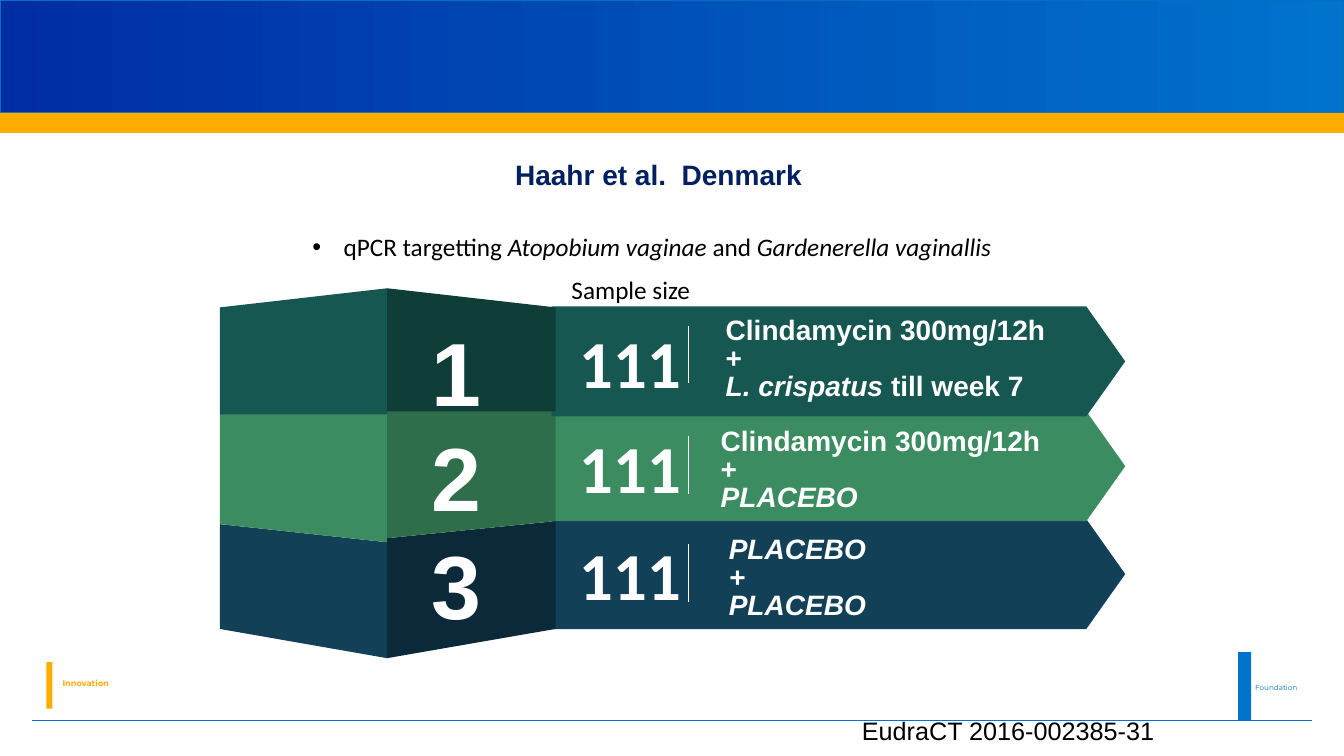
from dataclasses import dataclass
from itertools import pairwise

from lxml import etree
from pptx import Presentation
from pptx.dml.color import RGBColor
from pptx.enum.shapes import MSO_CONNECTOR, MSO_SHAPE
from pptx.enum.text import MSO_ANCHOR, PP_ALIGN
from pptx.oxml.ns import qn
from pptx.util import Inches, Pt

RECTANGLE, PENTAGON = MSO_SHAPE.RECTANGLE, MSO_SHAPE.PENTAGON
STRAIGHT = MSO_CONNECTOR.STRAIGHT
TOP, MIDDLE = MSO_ANCHOR.TOP, MSO_ANCHOR.MIDDLE
LEFT, CENTER = PP_ALIGN.LEFT, PP_ALIGN.CENTER
CELL = Inches(0.1)
COLUMNS, ROWS = 133.3, 75


@dataclass(frozen=True)
class Theme:
    """Colours, fonts and type sizes of the slide."""
    deep_blue: str = "002CA4"
    blue: str = "0073CD"
    outline: str = "0070C0"
    amber: str = "FEAC00"
    title: str = "002060"
    black: str = "000000"
    white: str = "FFFFFF"
    heading_font: str = "Arial"
    body_font: str = "Calibri"
    brand_font: str = "Montserrat"
    number_size: float = 64
    sample_size: float = 48
    heading_size: float = 20
    body_size: float = 18
    innovation_size: float = 5.9
    foundation_size: float = 5.2


@dataclass(frozen=True)
class Box:
    """An area measured in grid cells."""
    left: float
    top: float
    width: float
    height: float

    def inner(self, left, top, width, height):
        """Return an area placed relative to this one."""
        return Box(self.left + left, self.top + top, width, height)

    def lengths(self):
        """Return left, top, width and height as slide lengths."""
        return [round(value * CELL) for value in (self.left, self.top, self.width, self.height)]


@dataclass(frozen=True)
class Arm:
    """One study arm: colours, offsets within the figure and treatment lines."""
    colour: str
    shade: str
    arrow_top: float
    divider_top: float
    treatment_left: float
    treatment: tuple


THEME = Theme()
SAMPLE = "111"
CLINDAMYCIN, PLUS, PLACEBO = [("Clindamycin 300mg/12h", False)], [("+", False)], [("PLACEBO", True)]
CRISPATUS = [("L. crispatus ", True), ("till week 7", False)]
ARMS = (
    Arm("165751", "0F3D38", 1.8, 3.7, 49.2, (CLINDAMYCIN, PLUS, CRISPATUS)),
    Arm("3B8D61", "2E6E4B", 12.2, 14.7, 48.7, (CLINDAMYCIN, PLUS, PLACEBO)),
    Arm("124057", "0B2939", 22.9, 25.4, 49.5, (PLACEBO, [("+", True)], PLACEBO)),
)
FOLDS = (0, 16.6, 33.3)
SEAMS = (
    (1.9, 0, 0, 1.9),
    (12.5, 12.5, 12.2, 12.2),
    (23.4, 25.2, 24.8, 23.1),
    (33.8, 36.7, 36.7, 33.8),
)


def rgb(colour):
    """Turn a hex colour into a colour value."""
    return RGBColor.from_string(colour)


def paint(shape, colour):
    """Give a shape a flat fill without line or shadow."""
    shape.shadow.inherit = False
    shape.fill.solid()
    shape.fill.fore_color.rgb = rgb(colour)
    shape.line.fill.background()
    return shape


def add_block(slide, box, colour, kind=RECTANGLE):
    """Add a flat preset shape."""
    return paint(slide.shapes.add_shape(kind, *box.lengths()), colour)


def add_line(slide, box, colour, width):
    """Add a straight line from the top left to the bottom right of a box."""
    left, top, across, down = box.lengths()
    line = slide.shapes.add_connector(STRAIGHT, left, top, left + across, top + down)
    line.line.color.rgb = rgb(colour)
    line.line.width = Pt(width)
    etree.SubElement(line._element.spPr, qn("a:effectLst"))


def add_facet(slide, points, colour):
    """Add a flat polygon through points given in cells."""
    corners = [(round(x * CELL), round(y * CELL)) for x, y in points]
    builder = slide.shapes.build_freeform(*corners[0], scale=1.0)
    builder.add_line_segments(corners[1:], close=True)
    paint(builder.convert_to_shape(), colour)


def write(shape, lines, size, colour, font, bold=False, align=LEFT, anchor=TOP,
          insets=(1, 0.5), spacing=None, bullet=None):
    """Fill a shape with lines of (text, italic) runs."""
    frame = shape.text_frame
    frame.word_wrap = True
    frame.vertical_anchor = anchor
    frame.margin_left = frame.margin_right = round(insets[0] * CELL)
    frame.margin_top = frame.margin_bottom = round(insets[1] * CELL)
    for index, runs in enumerate(lines):
        paragraph = frame.add_paragraph() if index else frame.paragraphs[0]
        paragraph.alignment = align
        if spacing:
            paragraph.line_spacing = spacing
        if bullet:
            properties = paragraph._p.get_or_add_pPr()
            properties.set("marL", str(Inches(0.31)))
            properties.set("indent", str(-Inches(0.31)))
            etree.SubElement(properties, qn("a:buFont"), typeface="Arial")
            etree.SubElement(properties, qn("a:buChar"), char=bullet)
        paragraph.font.size = Pt(size)
        paragraph.font.name = font
        paragraph.font.bold = bold
        paragraph.font.color.rgb = rgb(colour)
        for text, italic in runs:
            run = paragraph.add_run()
            run.text = text
            if italic:
                run.font.italic = True


def add_text(slide, box, lines, size, colour, font, **options):
    """Add a text box."""
    write(slide.shapes.add_textbox(*box.lengths()), lines, size, colour, font, **options)


def draw_header(slide, box):
    """Draw the gradient banner and the amber stripe below it."""
    banner = add_block(slide, box.inner(0, 0, box.width, 11.2), THEME.blue)
    banner.fill.gradient()
    banner.fill.gradient_angle = 0
    for stop, colour, position in zip(banner.fill.gradient_stops, (THEME.deep_blue, THEME.blue), (0, 1)):
        stop.color.rgb = rgb(colour)
        stop.position = position
    banner.line.color.rgb = rgb(THEME.outline)
    banner.line.width = Pt(1)
    add_block(slide, box.inner(0, 11.2, box.width, 2), THEME.amber)


def draw_footer(slide, box):
    """Draw the base line, the two marks with their words and the trial number."""
    add_line(slide, box.inner(3.2, 6.8, 126.9, 0), THEME.blue, 0.82)
    add_block(slide, box.inner(4.6, 1, 0.6, 4.6), THEME.amber)
    add_block(slide, box.inner(122.8, 0, 1.3, 6.8), THEME.blue)
    add_text(slide, box.inner(6.2, 2.6, 6.1, 1.1), [[("Innovation", False)]],
             THEME.innovation_size, THEME.amber, THEME.brand_font, bold=True, insets=(0, 0))
    add_text(slide, box.inner(124.5, 3.1, 5.7, 0.9), [[("Foundation", False)]],
             THEME.foundation_size, THEME.blue, THEME.brand_font, insets=(0, 0))
    add_text(slide, box.inner(84.5, 5.8, 33, 4), [[("EudraCT 2016-002385-31", False)]],
             THEME.body_size, THEME.black, THEME.heading_font)


def draw_introduction(slide, box):
    """Write the study name, the method and the sample size label."""
    add_text(slide, box.inner(20.1, 0, 77.2, 4.4), [[("Haahr et al.  Denmark", False)]],
             THEME.heading_size, THEME.title, THEME.heading_font, bold=True)
    method = [("qPCR targetting ", False), ("Atopobium vaginae ", True),
              ("and ", False), ("Gardenerella vaginallis", True)]
    add_text(slide, box.inner(0, 7.4, 75, 4), [method],
             THEME.body_size, THEME.black, THEME.body_font, bullet="•")
    add_text(slide, box.inner(25.7, 11.6, 16, 4), [[("Sample size", False)]],
             THEME.body_size, THEME.black, THEME.body_font)


def draw_arm(slide, box, number, arm, upper, lower):
    """Draw one folded band with its arrow, number, sample size and treatment."""
    arrow = add_block(slide, box.inner(32.9, arm.arrow_top, 56.9, 10.9), arm.colour, PENTAGON)
    arrow.adjustments[0] = 0.354
    write(arrow, [[(SAMPLE, False)]], THEME.sample_size, THEME.white, THEME.body_font,
          bold=True, anchor=MIDDLE, insets=(2.7, 1.3))
    for side, colour in enumerate((arm.colour, arm.shade)):
        near, far = FOLDS[side:side + 2]
        first, second = 2 * side, 2 * side + 1
        points = ((near, upper[first]), (far, upper[second]), (far, lower[second]), (near, lower[first]))
        add_facet(slide, [(box.left + x, box.top + y) for x, y in points], colour)
    add_text(slide, box.inner(10, arm.arrow_top + 0.9, 27, 10.9), [[(str(number), False)]],
             THEME.number_size, THEME.white, THEME.heading_font,
             bold=True, align=CENTER, anchor=MIDDLE, insets=(0, 0))
    add_line(slide, box.inner(46.5, arm.divider_top, 0, 5.7), THEME.white, 0.75)
    add_text(slide, box.inner(arm.treatment_left, arm.divider_top - 1.2, 50, 9.4), arm.treatment,
             THEME.heading_size, THEME.white, THEME.heading_font, bold=True, spacing=0.83)


def draw_arms(slide, box):
    """Stack the study arms from the lowest to the highest."""
    bands = list(zip(range(1, len(ARMS) + 1), ARMS, pairwise(SEAMS)))
    for number, arm, (upper, lower) in reversed(bands):
        draw_arm(slide, box, number, arm, upper, lower)


def main():
    """Build the slide and save it."""
    presentation = Presentation()
    presentation.slide_width = round(COLUMNS * CELL)
    presentation.slide_height = ROWS * CELL
    slide = presentation.slides.add_slide(presentation.slide_layouts[6])
    draw_header(slide, Box(0, 0, COLUMNS, 13.2))
    draw_footer(slide, Box(0, 64.7, COLUMNS, 10.3))
    draw_introduction(slide, Box(30, 15.1, 97.3, 15.6))
    draw_arms(slide, Box(21.8, 28.6, 89.8, 36.7))
    presentation.save("out.pptx")


if __name__ == "__main__":
    main()
